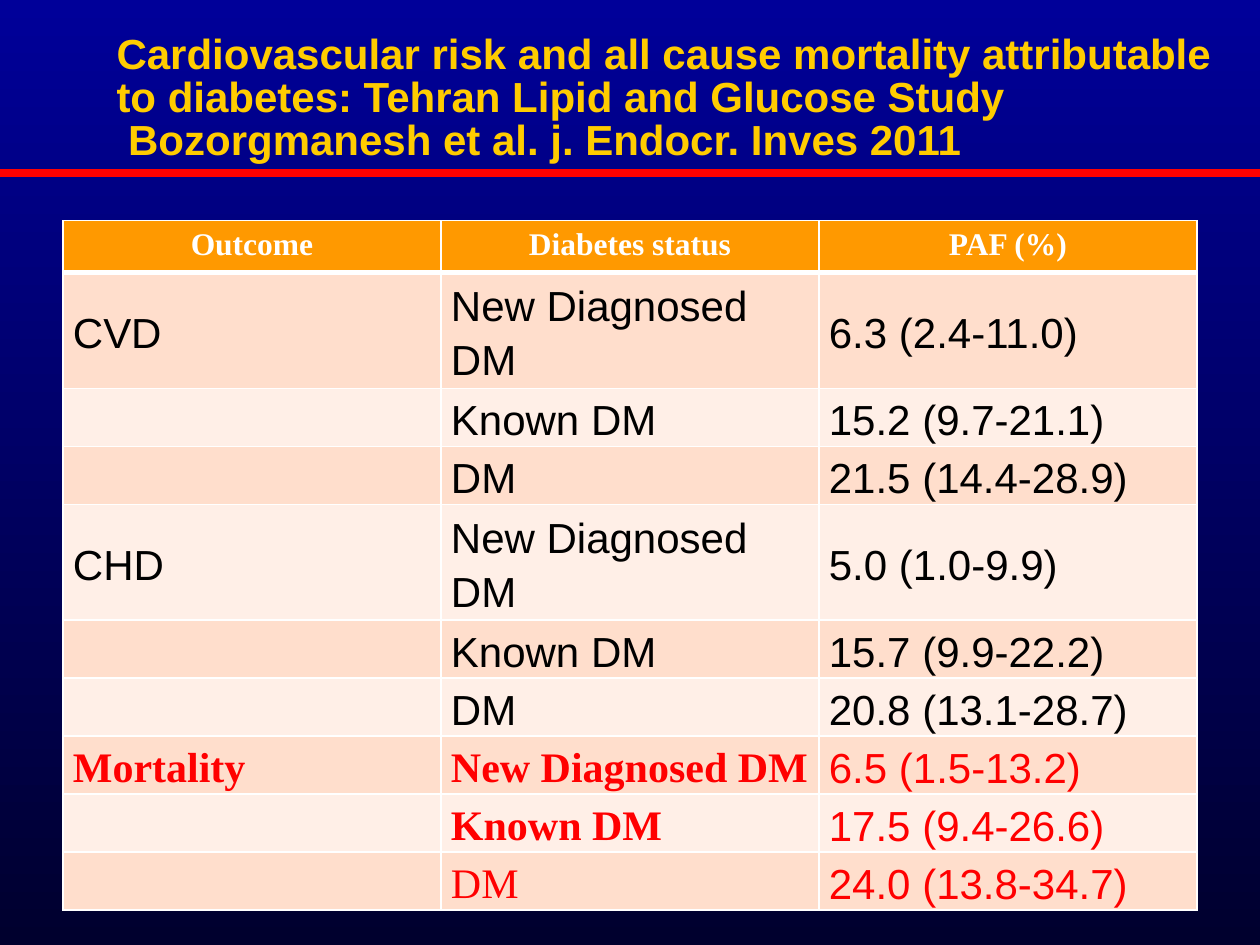
from lxml import etree
from pptx import Presentation
from pptx import util as u
from pptx.dml.color import RGBColor
from pptx.enum import shapes, text
from pptx.oxml.ns import qn

HEX = {"top": "000099", "base": "00002E", "rule": "FF0000", "title": "FFCC00",
       "head": "FF9900", "odd": "FFDECC", "even": "FFEFE7",
       "white": "FFFFFF", "black": "000000", "red": "FF0000"}
SANS, SERIF = "Arial", "Times New Roman"
LEFT, MID, JUST = text.PP_ALIGN.LEFT, text.PP_ALIGN.CENTER, text.PP_ALIGN.JUSTIFY

TITLE = ("Cardiovascular risk and all cause mortality attributable to diabetes: "
         "Tehran Lipid and Glucose Study\v Bozorgmanesh et al. j. Endocr. Inves 2011")
HEADS = ["Outcome", "Diabetes status", "PAF (%)"]
STATES = ["New Diagnosed DM", "Known DM", "DM"]
RISKS = {
    "CVD": ["6.3 (2.4-11.0)", "15.2 (9.7-21.1)", "21.5 (14.4-28.9)"],
    "CHD": ["5.0 (1.0-9.9)", "15.7 (9.9-22.2)", "20.8 (13.1-28.7)"],
    "Mortality": ["6.5 (1.5-13.2)", "17.5 (9.4-26.6)", "24.0 (13.8-34.7)"],
}


def paint(color, name):
    color.rgb = RGBColor.from_string(HEX[name])


def write(frame, words, size=24, font=SANS, color="black", bold=False,
          align=LEFT, lead=None, gap=None):
    para = frame.paragraphs[0]
    para.text = words
    para.alignment = align
    para.line_spacing = lead
    para.space_before = para.space_after = gap
    for run in para.runs:
        run.font.size = u.Pt(size)
        run.font.name = font
        run.font.bold = bold
        paint(run.font.color, color)


def edge(cell, base):
    """Draw white borders round a cell; base is the width of the lower one."""
    props = cell._tc.get_or_add_tcPr()
    for side, width in (("L", 1), ("R", 1), ("T", 1), ("B", base)):
        line = etree.SubElement(props, qn("a:ln" + side), w=str(u.Pt(width)))
        fill = etree.SubElement(line, qn("a:solidFill"))
        etree.SubElement(fill, qn("a:srgbClr"), val=HEX["white"])


class Deck:
    def __init__(self):
        self.show = Presentation()
        self.show.slide_width, self.show.slide_height = u.Cm(25.4), u.Cm(19.05)
        self.slide = self.show.slides.add_slide(self.show.slide_layouts[6])

    def shade(self, *names):
        fill = self.slide.background.fill
        fill.gradient()
        fill.gradient_angle = 270
        for stop, name in zip(fill.gradient_stops, names):
            paint(stop.color, name)

    def rule(self, y, width):
        line = self.slide.shapes.add_connector(
            shapes.MSO_CONNECTOR.STRAIGHT, 0, u.Cm(y), self.show.slide_width, u.Cm(y))
        line.line.width = u.Pt(width)
        paint(line.line.color, "rule")
        etree.SubElement(line._element.spPr, qn("a:effectLst"))

    def title(self, words, x, y, w, h):
        box = self.slide.shapes.add_textbox(u.Cm(x), u.Cm(y), u.Cm(w), u.Cm(h))
        frame = box.text_frame
        frame.word_wrap = True
        frame.vertical_anchor = text.MSO_ANCHOR.BOTTOM
        write(frame, words, color="title", bold=True, lead=0.85)

    def table(self, rows, cols, x, y, w, h):
        grid = self.slide.shapes.add_table(
            rows, cols, u.Cm(x), u.Cm(y), u.Cm(w), u.Cm(h)).table
        for r in range(rows):
            for c in range(cols):
                cell = grid.cell(r, c)
                edge(cell, 1 if r else 3)
                cell.fill.solid()
                paint(cell.fill.fore_color,
                      ("odd" if r % 2 else "even") if r else "head")
        return grid

    def entry(self, cell, words, **form):
        cell.vertical_anchor = text.MSO_ANCHOR.MIDDLE
        cell.margin_left = cell.margin_right = u.Cm(0.2)
        cell.margin_top = cell.margin_bottom = 0
        write(cell.text_frame, words, lead=1.15, gap=u.Pt(3), **form)


def main():
    deck = Deck()
    deck.shade("top", "base")
    deck.rule(3.48, 4.5)
    deck.title(TITLE, 2.1, 0, 23.3, 3.43)

    grid = deck.table(10, 3, 1.27, 4.45, 22.86, 10.4)
    for c, head in enumerate(HEADS):
        write(grid.cell(0, c).text_frame, head, size=18, font=SERIF,
              color="white", bold=True, align=MID)
    row = 1
    for name, values in RISKS.items():
        key = name == "Mortality"
        color, font = ("red", SERIF) if key else ("black", SANS)
        deck.entry(grid.cell(row, 0), name, font=font, color=color,
                   bold=key, align=JUST)
        for state, value in zip(STATES, values):
            deck.entry(grid.cell(row, 1), state, font=font, color=color,
                       bold=key and state != "DM")
            deck.entry(grid.cell(row, 2), value, color=color, align=JUST)
            row += 1
    deck.show.save("out.pptx")


if __name__ == "__main__":
    main()
